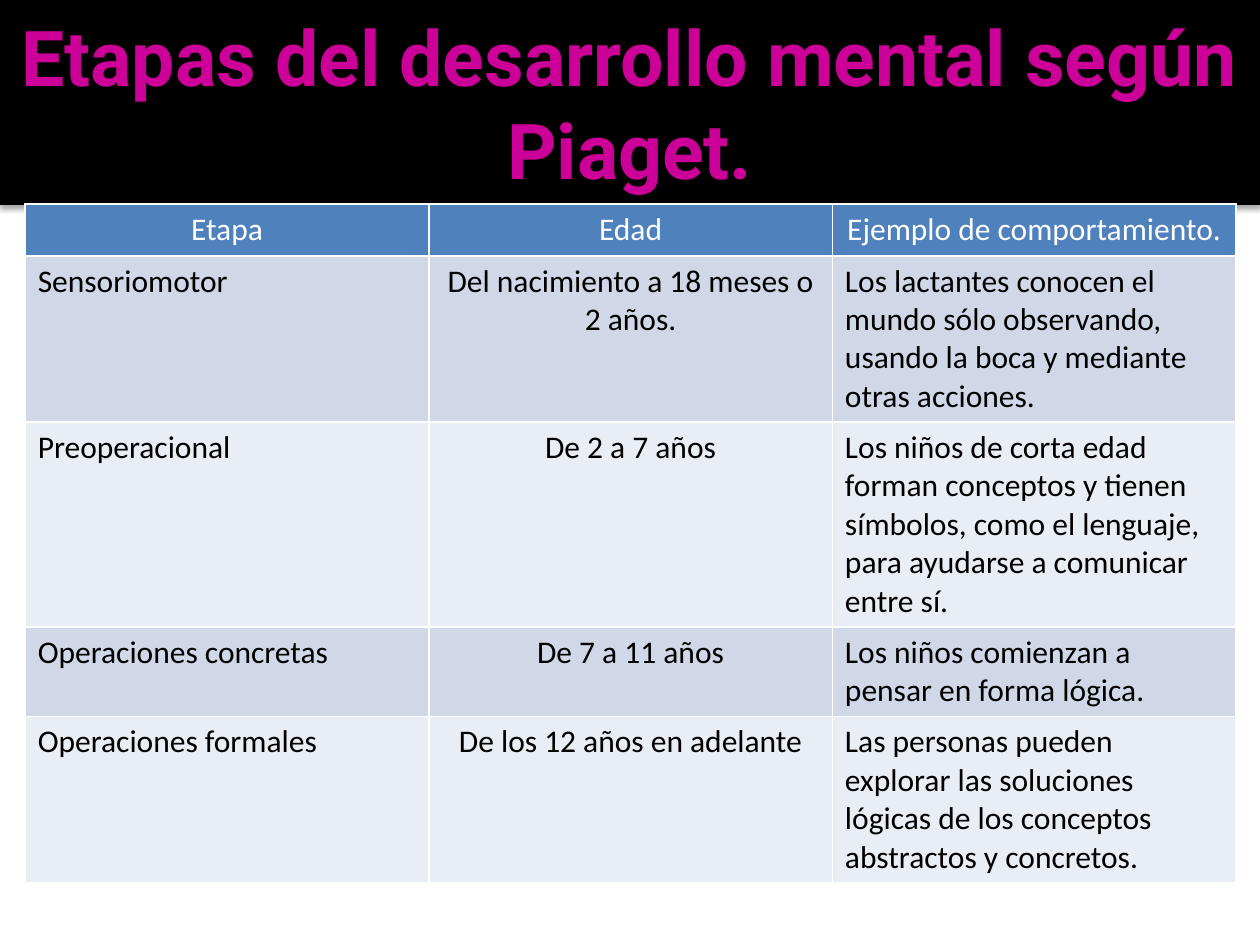
"""Build a slide with a table of Piaget's stages of mental development."""
from dataclasses import dataclass

import pptx
import pptx.dml.color
import pptx.enum.shapes
import pptx.enum.text
import pptx.oxml
import pptx.oxml.ns
import pptx.util

Inches = pptx.util.Inches
Align = pptx.enum.text.PP_ALIGN


@dataclass(frozen=True)
class Theme:
    banner: str = "000000"
    title: str = "CC0099"
    header_fill: str = "4F81BD"
    header_text: str = "FFFFFF"
    body_text: str = "000000"
    bands: tuple[str, str] = ("D0D8E8", "E9EDF4")
    title_font: str = "Roboto"
    body_font: str = "Calibri"
    title_size: int = 44
    body_size: int = 18


@dataclass(frozen=True)
class Stage:
    name: str
    age: str
    behaviour: str


THEME = Theme()
HEADINGS = ("Etapa", "Edad", "Ejemplo de comportamiento.")
STAGES = (
    Stage("Sensoriomotor", "Del nacimiento a 18 meses o 2 años.",
          "Los lactantes conocen el mundo sólo observando, usando la boca y mediante otras acciones."),
    Stage("Preoperacional", "De 2 a 7 años",
          "Los niños de corta edad forman conceptos y tienen símbolos, como el lenguaje, "
          "para ayudarse a comunicar entre sí."),
    Stage("Operaciones concretas", "De 7 a 11 años",
          "Los niños comienzan a pensar en forma lógica."),
    Stage("Operaciones formales", "De los 12 años en adelante",
          "Las personas pueden explorar las soluciones lógicas de los conceptos abstractos y concretos."),
)
BANNER_HEIGHT = Inches(1.62)
TABLE_LEFT = Inches(0.2)
TABLE_WIDTH = Inches(9.61)
TABLE_HEIGHT = Inches(5.6)
ROW_HEIGHT = Inches(0.41)


def rgb(value: str) -> pptx.dml.color.RGBColor:
    return pptx.dml.color.RGBColor.from_string(value)


def write(frame, text: str, font: str, size: int, color: str, align: Align, bold: bool = False) -> None:
    para = frame.paragraphs[0]
    para.alignment = align
    span = para.add_run()
    span.text = text
    span.font.name = font
    span.font.size = pptx.util.Pt(size)
    span.font.bold = bold
    span.font.color.rgb = rgb(color)


def add_drop_shadow(box) -> None:
    box.shadow.inherit = False
    effects = box._element.spPr.find(pptx.oxml.ns.qn("a:effectLst"))
    effects.append(pptx.oxml.parse_xml(
        f'<a:outerShdw {pptx.oxml.ns.nsdecls("a")} blurRad="{pptx.util.Pt(3.1)}" '
        f'dist="{pptx.util.Pt(1.8)}" dir="5400000" rotWithShape="0">'
        f'<a:srgbClr val="{THEME.banner}"><a:alpha val="35000"/></a:srgbClr></a:outerShdw>'))


def draw_banner(page, width: int) -> None:
    box = page.shapes.add_shape(pptx.enum.shapes.MSO_SHAPE.RECTANGLE, 0, 0, width, BANNER_HEIGHT)
    box.fill.solid()
    box.fill.fore_color.rgb = rgb(THEME.banner)
    box.line.color.rgb = rgb(THEME.banner)
    box.line.width = pptx.util.Pt(0.75)
    add_drop_shadow(box)
    box.text_frame.word_wrap = True
    box.text_frame.vertical_anchor = pptx.enum.text.MSO_ANCHOR.MIDDLE
    write(box.text_frame, "Etapas del desarrollo mental según Piaget.",
          THEME.title_font, THEME.title_size, THEME.title, Align.CENTER, bold=True)


def fill_cell(cell, text: str, fill: str, color: str, align: Align) -> None:
    cell.fill.solid()
    cell.fill.fore_color.rgb = rgb(fill)
    write(cell.text_frame, text, THEME.body_font, THEME.body_size, color, align)


def draw_stages(page) -> None:
    frame = page.shapes.add_table(len(STAGES) + 1, len(HEADINGS), TABLE_LEFT, BANNER_HEIGHT,
                                  TABLE_WIDTH, ROW_HEIGHT * (len(STAGES) + 1))
    frame.height = TABLE_HEIGHT
    table = frame.table
    for column, heading in enumerate(HEADINGS):
        fill_cell(table.cell(0, column), heading, THEME.header_fill, THEME.header_text, Align.CENTER)
    for row, stage in enumerate(STAGES, start=1):
        band = THEME.bands[(row - 1) % len(THEME.bands)]
        for column, text in enumerate((stage.name, stage.age, stage.behaviour)):
            align = Align.CENTER if column == 1 else Align.LEFT
            fill_cell(table.cell(row, column), text, band, THEME.body_text, align)


def main() -> None:
    deck = pptx.Presentation()
    deck.slide_width = Inches(10)
    deck.slide_height = Inches(7.5)
    page = deck.slides.add_slide(deck.slide_layouts[6])
    draw_banner(page, deck.slide_width)
    draw_stages(page)
    deck.save("out.pptx")


if __name__ == "__main__":
    main()
